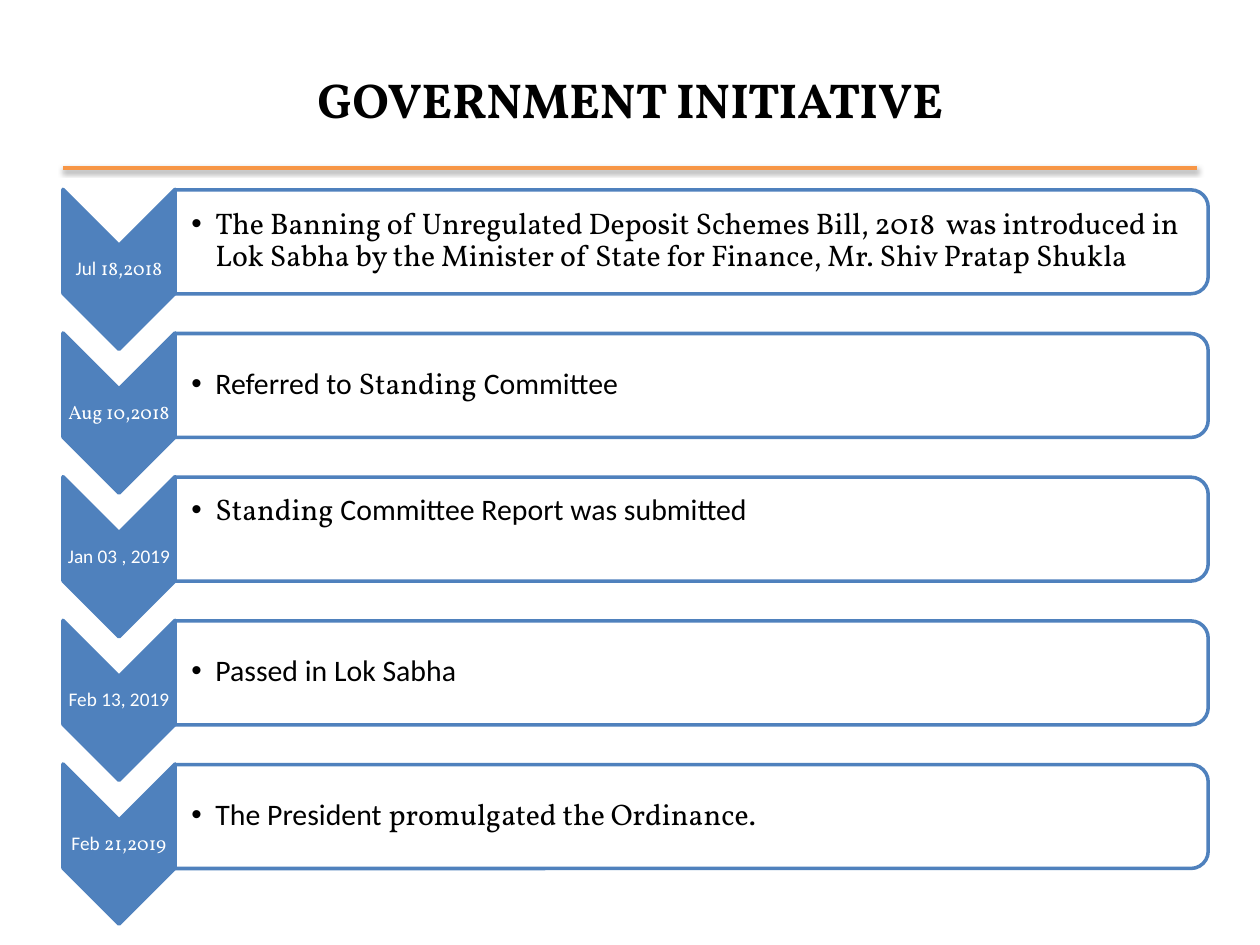
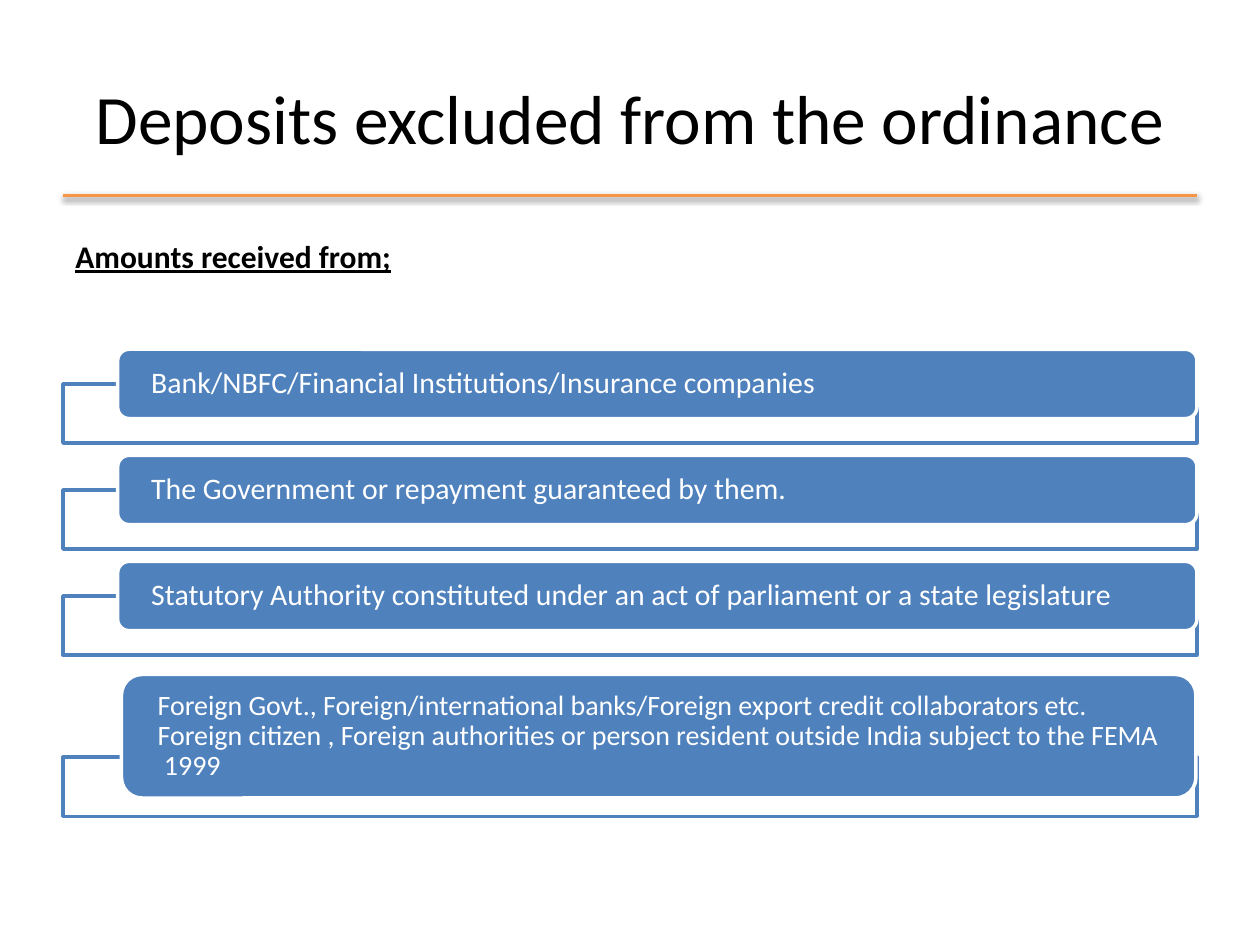
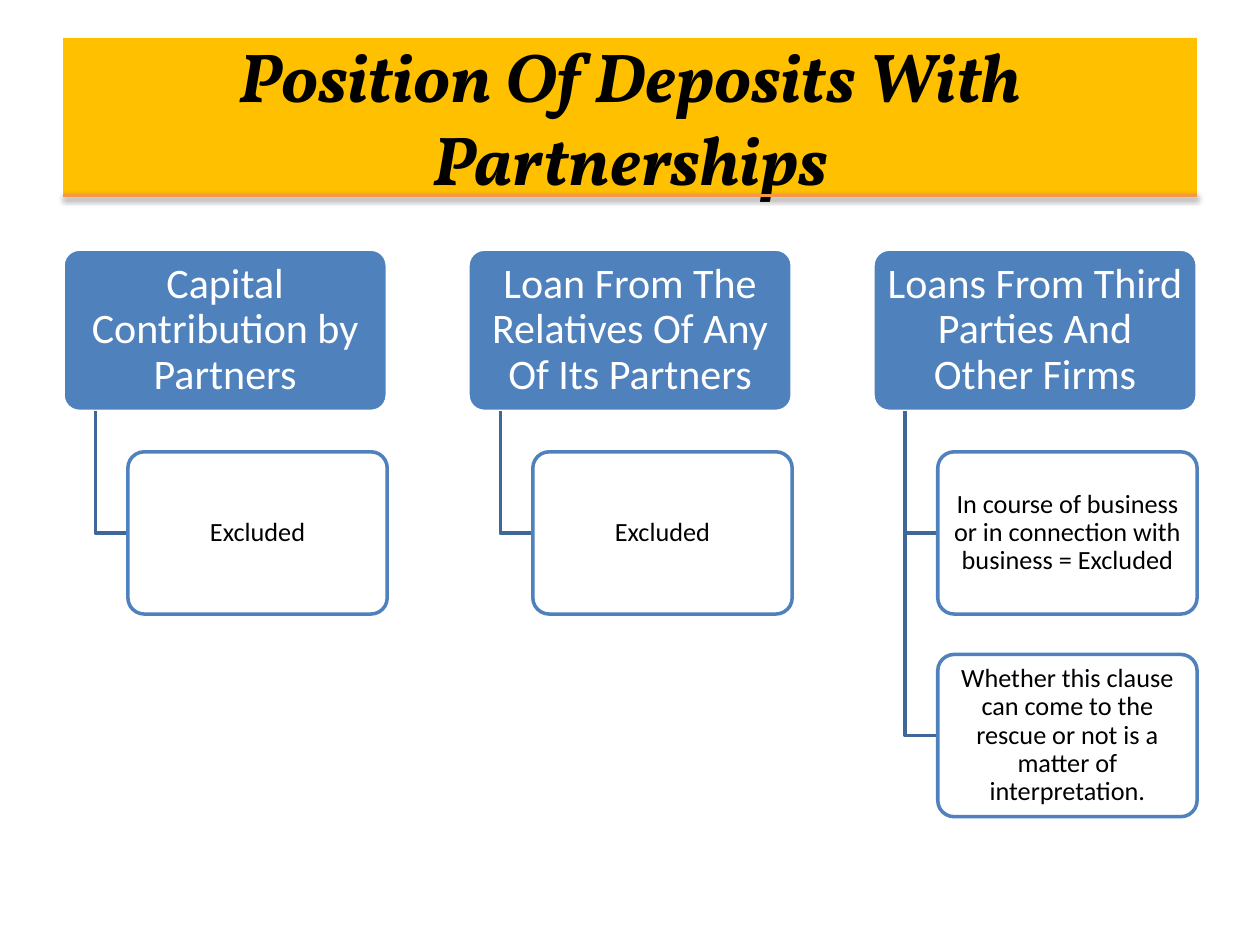
from dataclasses import dataclass

from lxml.etree import SubElement
from pptx import Presentation
from pptx.dml.color import RGBColor
from pptx.enum.shapes import MSO_CONNECTOR, MSO_SHAPE
from pptx.enum.text import MSO_ANCHOR, MSO_AUTO_SIZE, PP_ALIGN
from pptx.oxml.ns import qn
from pptx.util import Pt


@dataclass(frozen=True)
class Theme:
    blue: str = "4F81BD"
    dark_blue: str = "3F6797"
    orange: str = "F79646"
    gold: str = "FFC000"
    white: str = "FFFFFF"
    black: str = "000000"
    sans: str = "Calibri"
    serif: str = "Vollkorn"
    title: float = 39.6
    caps_title: float = 28
    heading: float = 24
    subtitle: float = 18
    body: float = 17
    long_body: float = 16
    detail: float = 15
    date: float = 11
    stroke: float = 2
    left: float = 36
    right: float = 684


THEME = Theme()
TITLE_BOX = (36, 21.6, 648, 90)
RULE_Y = 111.6

MILESTONES = [
    ([("Jul ", THEME.sans), ("18,2018", THEME.serif)],
     [("The Banning of Unregulated Deposit Schemes Bill, 2018  was introduced in "
       "Lok Sabha by the Minister of State for Finance, Mr. Shiv Pratap Shukla", THEME.serif)], 0.7),
    ([("Aug 10,2018", THEME.serif)],
     [("Referred to ", THEME.sans), ("Standing", THEME.serif), (" Committee", THEME.sans)], 0.7),
    ([("Jan 03 , 2019", THEME.sans)],
     [("Standing", THEME.serif), (" Committee Report was submitted", THEME.sans)], 21),
    ([("Feb 13, 2019", THEME.sans)],
     [("Passed in Lok Sabha", THEME.sans)], 0.7),
    ([("Feb ", THEME.sans), ("21,2019", THEME.serif)],
     [("The President ", THEME.sans), ("promulgated the Ordinance.", THEME.serif)], 0.7),
]

EXCLUDED_SOURCES = [
    "Bank/NBFC/Financial Institutions/Insurance companies",
    "The Government or repayment guaranteed by them.",
    "Statutory Authority constituted under an act of parliament or a state legislature",
]
FOREIGN_SOURCES = (
    "Foreign Govt., Foreign/international banks/Foreign export credit collaborators etc. "
    "Foreign citizen , Foreign authorities or person resident outside India subject to the FEMA  1999"
)

PARTNERSHIP_DEPOSITS = [
    ("Capital Contribution by Partners", ["Excluded"]),
    ("Loan From The Relatives Of Any Of Its Partners", ["Excluded"]),
    ("Loans From Third Parties And Other Firms",
     ["In course of business or in connection with business = Excluded",
      "Whether this clause can come to the rescue or not is a matter of interpretation."]),
]


def rgb(color):
    return RGBColor.from_string(color)


def write(holder, text, size, color=THEME.black, font=THEME.sans, bold=False, italic=False,
          underline=False, align=PP_ALIGN.LEFT, anchor=MSO_ANCHOR.MIDDLE,
          insets=(7.2, 3.6, 7.2, 3.6), spacing=None, bullet_indent=0):
    frame = holder.text_frame
    frame.word_wrap = True
    frame.auto_size = MSO_AUTO_SIZE.NONE
    frame.vertical_anchor = anchor
    frame.margin_left, frame.margin_top, frame.margin_right, frame.margin_bottom = map(Pt, insets)
    paragraph = frame.paragraphs[0]
    paragraph.alignment = align
    paragraph.line_spacing = spacing
    for words, family in ([(text, font)] if isinstance(text, str) else text):
        run = paragraph.add_run()
        run.text = words
        run.font.name = family
        run.font.size = Pt(size)
        run.font.color.rgb = rgb(color)
        run.font.bold, run.font.italic, run.font.underline = bold, italic, underline
    if bullet_indent:
        properties = paragraph._p.get_or_add_pPr()
        properties.set("marL", str(Pt(bullet_indent)))
        properties.set("indent", str(-Pt(bullet_indent)))
        SubElement(properties, qn("a:buFont"), typeface="Arial")
        SubElement(properties, qn("a:buChar"), char="•")


def place(holder, box):
    holder.left, holder.top, holder.width, holder.height = map(Pt, box)


def add_text(slide, box, text, size, **text_format):
    write(slide.shapes.add_textbox(*map(Pt, box)), text, size, **text_format)


def add_panel(slide, kind, box, fill, line, alpha=None, corner=None):
    panel = slide.shapes.add_shape(kind, *map(Pt, box))
    panel.shadow.inherit = False
    panel.fill.solid()
    panel.fill.fore_color.rgb = rgb(fill)
    if alpha:
        tint = panel._element.spPr.find(qn("a:solidFill"))[0]
        SubElement(tint, qn("a:alpha"), val=str(alpha * 1000))
    panel.line.color.rgb = rgb(line)
    panel.line.width = Pt(THEME.stroke)
    if corner:
        panel.adjustments[0] = corner
    return panel


def add_turned_panel(slide, kind, box, fill, **panel_format):
    left, top, width, height = box
    shift = (width - height) / 2
    panel = add_panel(slide, kind, (left + shift, top - shift, height, width),
                      fill, THEME.blue, **panel_format)
    panel.rotation = 90


def add_title(slide, text, size=THEME.title, box=TITLE_BOX, fill=None, **text_format):
    title = slide.shapes.title
    place(title, box)
    write(title, text, size, align=PP_ALIGN.CENTER, **text_format)
    if fill:
        title.fill.solid()
        title.fill.fore_color.rgb = rgb(fill)


def add_rule(slide, y=RULE_Y):
    rule = slide.shapes.add_connector(
        MSO_CONNECTOR.STRAIGHT, Pt(THEME.left), Pt(y), Pt(THEME.right), Pt(y))
    rule.line.color.rgb = rgb(THEME.orange)
    rule.line.width = Pt(THEME.stroke)
    effects = SubElement(rule._element.spPr, qn("a:effectLst"))
    shadow = SubElement(effects, qn("a:outerShdw"), blurRad=str(Pt(3.1)), dist=str(Pt(1.6)),
                        dir="5400000", rotWithShape="0")
    shade = SubElement(shadow, qn("a:srgbClr"), val=THEME.black)
    SubElement(shade, qn("a:alpha"), val="38000")


def add_milestone(slide, top, date, event, bottom_inset):
    add_turned_panel(slide, MSO_SHAPE.CHEVRON, (36, top, 64, 91.5), THEME.blue)
    add_text(slide, (36, top + 32.2, 64, 27.4), date, THEME.date, color=THEME.white,
             align=PP_ALIGN.CENTER, insets=(0.7,) * 4, spacing=0.9)
    add_turned_panel(slide, MSO_SHAPE.ROUND_2_SAME_RECTANGLE, (100, top + 0.3, 590.4, 59.4),
                     THEME.white, alpha=90)
    add_text(slide, (100, top + 2.8, 587.5, 53.5), event, THEME.body,
             insets=(9.4, 0.7, 0.7, bottom_inset), spacing=0.9, bullet_indent=13.7)


def add_excluded_source(slide, text, tray_top, bar_box, size=THEME.body):
    add_panel(slide, MSO_SHAPE.RECTANGLE, (36, tray_top, 648, 33.8),
              THEME.white, THEME.blue, alpha=90)
    bar = add_panel(slide, MSO_SHAPE.ROUNDED_RECTANGLE, bar_box, THEME.blue, THEME.white)
    write(bar, text, size, color=THEME.white, insets=(17.3, 0, 17.3, 0), spacing=0.9)


def add_elbow(slide, left, top, right, bottom):
    builder = slide.shapes.build_freeform(Pt(left), Pt(top))
    builder.add_line_segments([(Pt(left), Pt(bottom)), (Pt(right), Pt(bottom))], close=False)
    elbow = builder.convert_to_shape()
    elbow.shadow.inherit = False
    elbow.fill.background()
    elbow.line.color.rgb = rgb(THEME.dark_blue)
    elbow.line.width = Pt(THEME.stroke)


def add_branch(slide, left, heading, treatments):
    top, height, pitch = 142.4, 92.7, 115.8
    head = add_panel(slide, MSO_SHAPE.ROUNDED_RECTANGLE, (left, top, 185.3, height),
                     THEME.blue, THEME.white, corner=0.1)
    write(head, heading, THEME.heading, color=THEME.white, align=PP_ALIGN.CENTER,
          insets=(3.6, 2.4, 3.6, 2.4), spacing=0.9)
    for row, treatment in enumerate(treatments, start=1):
        leaf_top = top + row * pitch
        add_elbow(slide, left + 18.5, top + height, left + 37.1, leaf_top + height / 2)
        leaf = add_panel(slide, MSO_SHAPE.ROUNDED_RECTANGLE, (left + 37.1, leaf_top, 148.2, height),
                         THEME.white, THEME.blue, alpha=90, corner=0.1)
        write(leaf, treatment, THEME.detail, align=PP_ALIGN.CENTER,
              insets=(2.2, 1.5, 2.2, 1.5), spacing=0.9)


def build_initiative(slide):
    for row, milestone in enumerate(MILESTONES):
        add_milestone(slide, 108.2 + row * 82.1, *milestone)
    add_title(slide, "GOVERNMENT INITIATIVE", THEME.caps_title, (54, 36, 612, 41),
              font=THEME.serif, bold=True, anchor=MSO_ANCHOR.TOP)
    add_rule(slide, 96)


def build_exclusions(slide):
    add_title(slide, "Deposits excluded from the ordinance")
    for row, source in enumerate(EXCLUDED_SOURCES):
        tray_top = 219.4 + row * 60.6
        add_excluded_source(slide, source, tray_top, (67.2, tray_top - 19.8, 616.8, 39.6))
    add_excluded_source(slide, FOREIGN_SOURCES, 432.7, (69.4, 385.4, 614, 70.6), THEME.long_body)
    add_text(slide, (36, 131.8, 660, 29), "Amounts received from;", THEME.subtitle,
             bold=True, underline=True, anchor=MSO_ANCHOR.TOP)
    add_rule(slide)


def build_partnerships(slide):
    add_title(slide, "Position Of Deposits With Partnerships", fill=THEME.gold,
              font=THEME.serif, bold=True, italic=True)
    for column, (heading, treatments) in enumerate(PARTNERSHIP_DEPOSITS):
        add_branch(slide, 36 + column * 231.4, heading, treatments)
    add_rule(slide)


def main():
    deck = Presentation()
    deck.slide_width, deck.slide_height = Pt(720), Pt(540)
    title_only = deck.slide_layouts[5]
    for build in (build_initiative, build_exclusions, build_partnerships):
        build(deck.slides.add_slide(title_only))
    deck.save("out.pptx")


if __name__ == "__main__":
    main()
